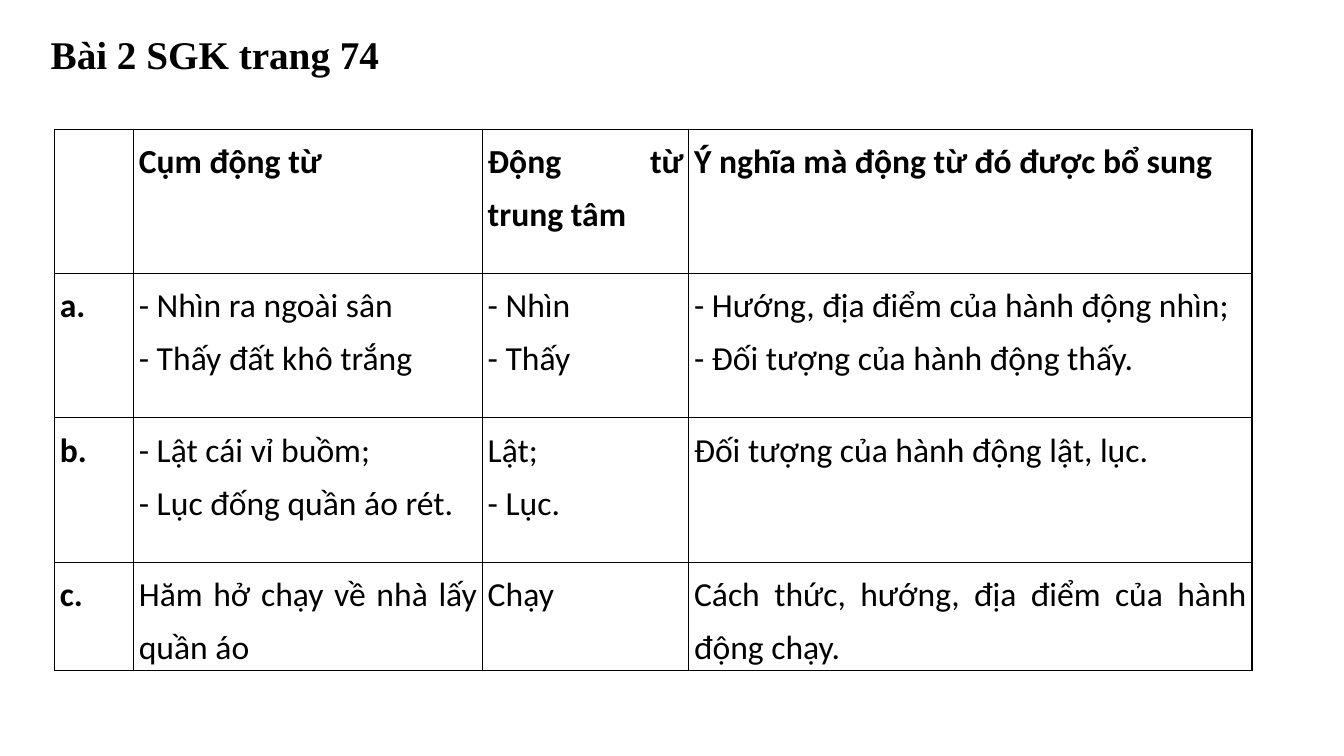
import pptx
import pptx.util
import pptx.dml.color
import pptx.enum.text
import pptx.oxml.ns
import lxml.etree

Pt = pptx.util.Pt
BLACK = pptx.dml.color.RGBColor(0, 0, 0)
WHITE = pptx.dml.color.RGBColor(255, 255, 255)
JUSTIFY = pptx.enum.text.PP_ALIGN.JUSTIFY
qn = pptx.oxml.ns.qn


def format_paragraph(p, font, size, bold):
    p.alignment = JUSTIFY
    for r in p.runs:
        r.font.name = font
        r.font.size = Pt(size)
        r.font.bold = bold
        r.font.color.rgb = BLACK


def add_borders(cell):
    tc_pr = cell._tc.get_or_add_tcPr()
    for side in ("a:lnL", "a:lnR", "a:lnT", "a:lnB"):
        ln = lxml.etree.SubElement(tc_pr, qn(side), w=str(Pt(1)))
        fill = lxml.etree.SubElement(ln, qn("a:solidFill"))
        lxml.etree.SubElement(fill, qn("a:srgbClr"), val=str(BLACK))


prs = pptx.Presentation()
prs.slide_width = Pt(960)
prs.slide_height = Pt(540)
s = prs.slides.add_slide(prs.slide_layouts[5])

title = s.shapes.title
title.left, title.top, title.width, title.height = Pt(29), Pt(18), Pt(252), Pt(41)
tf = title.text_frame
tf.text = "Bài 2 SGK trang 74"
tf.word_wrap = False
tf.auto_size = pptx.enum.text.MSO_AUTO_SIZE.SHAPE_TO_FIT_TEXT
tf.vertical_anchor = pptx.enum.text.MSO_ANCHOR.TOP
format_paragraph(tf.paragraphs[0], "Times New Roman", 28, True)

rows = [
    ["", "Cụm động từ", "Động từ trung tâm", "Ý nghĩa mà động từ đó được bổ sung"],
    ["a.", "- Nhìn ra ngoài sân\n- Thấy đất khô trắng", "- Nhìn\n- Thấy",
     "- Hướng, địa điểm của hành động nhìn;\n- Đối tượng của hành động thấy."],
    ["b.", "- Lật cái vỉ buồm;\n- Lục đống quần áo rét.", "Lật;\n- Lục.",
     "Đối tượng của hành động lật, lục."],
    ["c.", "Hăm hở chạy về nhà lấy quần áo", "Chạy",
     "Cách thức, hướng, địa điểm của hành động chạy."],
]
widths = [56.4, 249.2, 147.4, 402.4]
heights = [103.1, 103.1, 103.1, 77.2]

table = s.shapes.add_table(len(rows), len(widths), Pt(39), Pt(92.3),
                           Pt(sum(widths)), Pt(sum(heights))).table
for column, width in zip(table.columns, widths):
    column.width = Pt(width)
for row, height in zip(table.rows, heights):
    row.height = Pt(height)

for i, texts in enumerate(rows):
    for j, text in enumerate(texts):
        cell = table.cell(i, j)
        cell.margin_left = cell.margin_right = Pt(3.8)
        cell.margin_top = cell.margin_bottom = 0
        add_borders(cell)
        cell.fill.solid()
        cell.fill.fore_color.rgb = WHITE
        cell.text_frame.text = text
        for p in cell.text_frame.paragraphs:
            p.line_spacing = 1.3
            format_paragraph(p, "Calibri", 24, i == 0 or j == 0)

prs.save("out.pptx")
